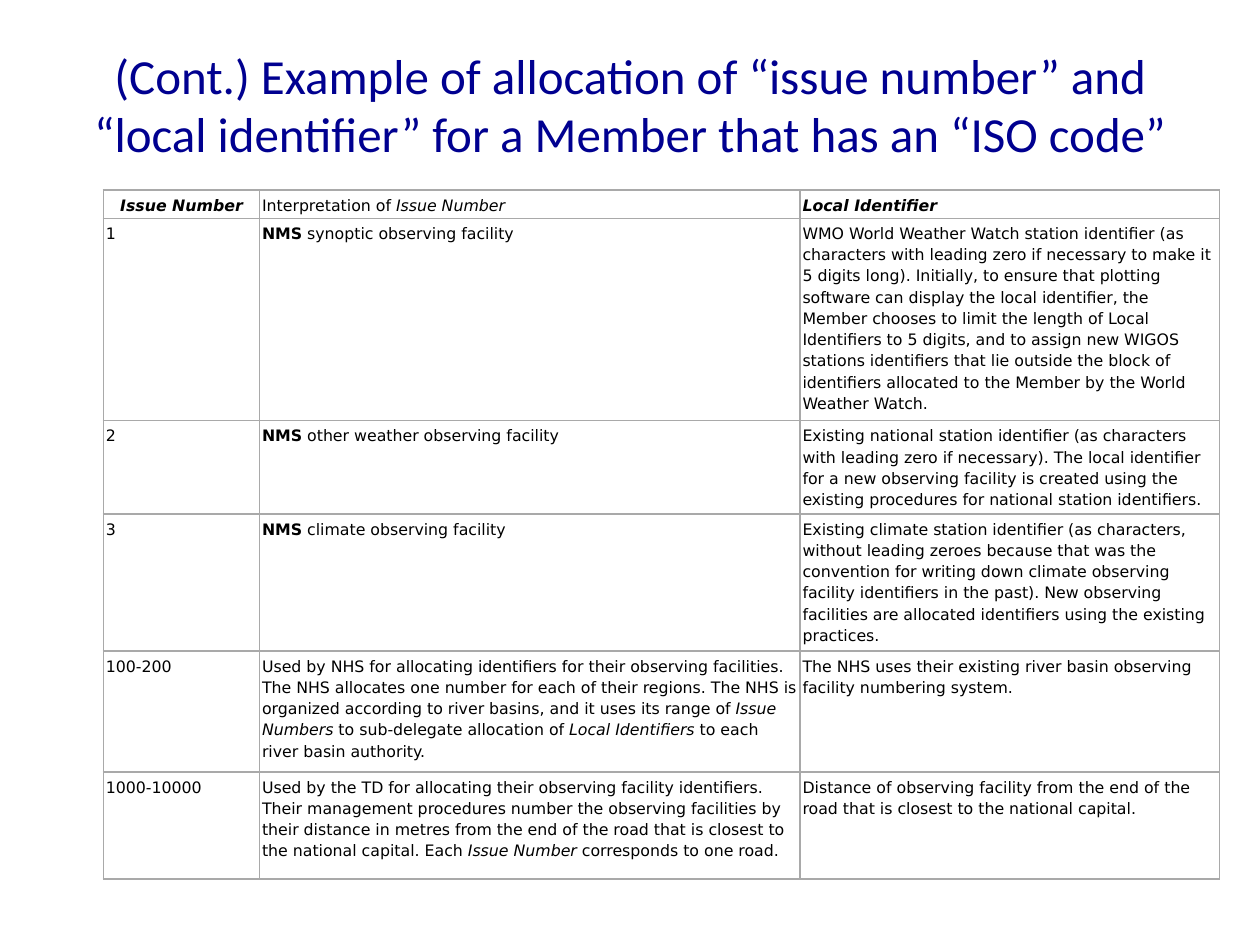
from lxml.etree import SubElement
from pptx import Presentation
from pptx.dml.color import RGBColor
from pptx.enum.text import MSO_ANCHOR, PP_ALIGN
from pptx.oxml.ns import qn
from pptx.util import Inches, Pt

TITLE = ("(Cont.) Example of allocation of “issue number” and “local identifier” "
         "for a Member that has an “ISO code”")
COLUMNS = [1.24, 4.29, 3.33]
HEIGHTS = [0.21, 1.56, 0.73, 1.05, 0.96, 0.85]
ROWS = [
    [[("Issue Number", "bi")],
     [("Interpretation of ", ""), ("Issue Number", "i")],
     [("Local Identifier", "bi")]],
    [[("1", "")],
     [("NMS", "b"), (" synoptic observing facility", "")],
     [("WMO World Weather Watch station identifier (as characters with leading zero if "
       "necessary to make it 5 digits long). Initially, to ensure that plotting software can "
       "display the local identifier, the Member chooses to limit the length of Local "
       "Identifiers to 5 digits, and to assign new WIGOS stations identifiers that lie outside "
       "the block of identifiers allocated to the Member by the World Weather Watch.", "")]],
    [[("2", "")],
     [("NMS", "b"), (" other weather observing facility", "")],
     [("Existing national station identifier (as characters with leading zero if necessary). "
       "The local identifier for a new observing facility is created using the existing "
       "procedures for national station identifiers.", "")]],
    [[("3", "")],
     [("NMS", "b"), (" climate observing facility", "")],
     [("Existing climate station identifier (as characters, without leading zeroes because "
       "that was the convention for writing down climate observing facility identifiers in the "
       "past). New observing facilities are allocated identifiers using the existing "
       "practices.", "")]],
    [[("100-200", "")],
     [("Used by NHS for allocating identifiers for their observing facilities. The NHS "
       "allocates one number for each of their regions. The NHS is organized according to river "
       "basins, and it uses its range of ", ""),
      ("Issue Numbers", "i"), (" to sub-delegate allocation of ", ""),
      ("Local Identifiers", "i"), (" to each river basin authority.", "")],
     [("The NHS uses their existing river basin observing facility numbering system.", "")]],
    [[("1000-10000", "")],
     [("Used by the TD for allocating their observing facility identifiers. Their management "
       "procedures number the observing facilities by their distance in metres from the end of "
       "the road that is closest to the national capital. Each ", ""),
      ("Issue Number", "i"), (" corresponds to one road.", "")],
     [("Distance of observing facility from the end of the road that is closest to the "
       "national capital.", "")]],
]


def color(value):
    """Return the colour for a hex string."""
    return RGBColor.from_string(value)


def add_run(p, text, font, size, fill, style=""):
    """Add a run; style holds b for bold and i for italic."""
    r = p.add_run()
    r.text = text
    r.font.name = font
    r.font.size = Pt(size)
    r.font.color.rgb = color(fill)
    r.font.bold = "b" in style
    r.font.italic = "i" in style


def add_title(s):
    """Add the centred slide title."""
    sp = s.shapes.add_textbox(Inches(0.5), Inches(0.3), Inches(9), Inches(1.05))
    tf = sp.text_frame
    tf.word_wrap = True
    tf.vertical_anchor = MSO_ANCHOR.MIDDLE
    p = tf.paragraphs[0]
    p.alignment = PP_ALIGN.CENTER
    add_run(p, TITLE, "Calibri", 28, "000090")


def set_borders(cell, value, width):
    """Draw all four borders of a cell."""
    props = cell._tc.get_or_add_tcPr()
    for side in ("lnL", "lnR", "lnT", "lnB"):
        line = SubElement(props, qn(f"a:{side}"), w=str(Pt(width)))
        fill = SubElement(line, qn("a:solidFill"))
        SubElement(fill, qn("a:srgbClr"), val=value)


def fill_cell(cell, runs, alignment):
    """Format one cell and write its runs."""
    set_borders(cell, "A9A9A9", 1)
    cell.fill.background()
    cell.margin_left = cell.margin_right = cell.margin_bottom = Inches(0.02)
    cell.margin_top = Inches(0.03)
    p = cell.text_frame.paragraphs[0]
    p.alignment = alignment
    p.line_spacing = 1.15
    p.space_after = Pt(1)
    for text, style in runs:
        add_run(p, text, "DejaVu Sans", 9, "000000", style)


def add_identifier_table(s):
    """Add the table of issue numbers and local identifiers."""
    table = s.shapes.add_table(len(ROWS), len(COLUMNS), Inches(0.82), Inches(1.51),
                               Inches(sum(COLUMNS)), Inches(sum(HEIGHTS))).table
    table.first_row = table.horz_banding = False
    for column, width in zip(table.columns, COLUMNS):
        column.width = Inches(width)
    for i, (row, height) in enumerate(zip(table.rows, HEIGHTS)):
        row.height = Inches(height)
        first = PP_ALIGN.JUSTIFY if i else PP_ALIGN.CENTER
        for j, cell in enumerate(row.cells):
            fill_cell(cell, ROWS[i][j], PP_ALIGN.LEFT if j else first)


def main():
    """Build and save the slide."""
    prs = Presentation()
    prs.slide_width, prs.slide_height = Inches(10), Inches(7.5)
    s = prs.slides.add_slide(prs.slide_layouts[6])
    add_title(s)
    add_identifier_table(s)
    prs.save("out.pptx")


if __name__ == "__main__":
    main()
